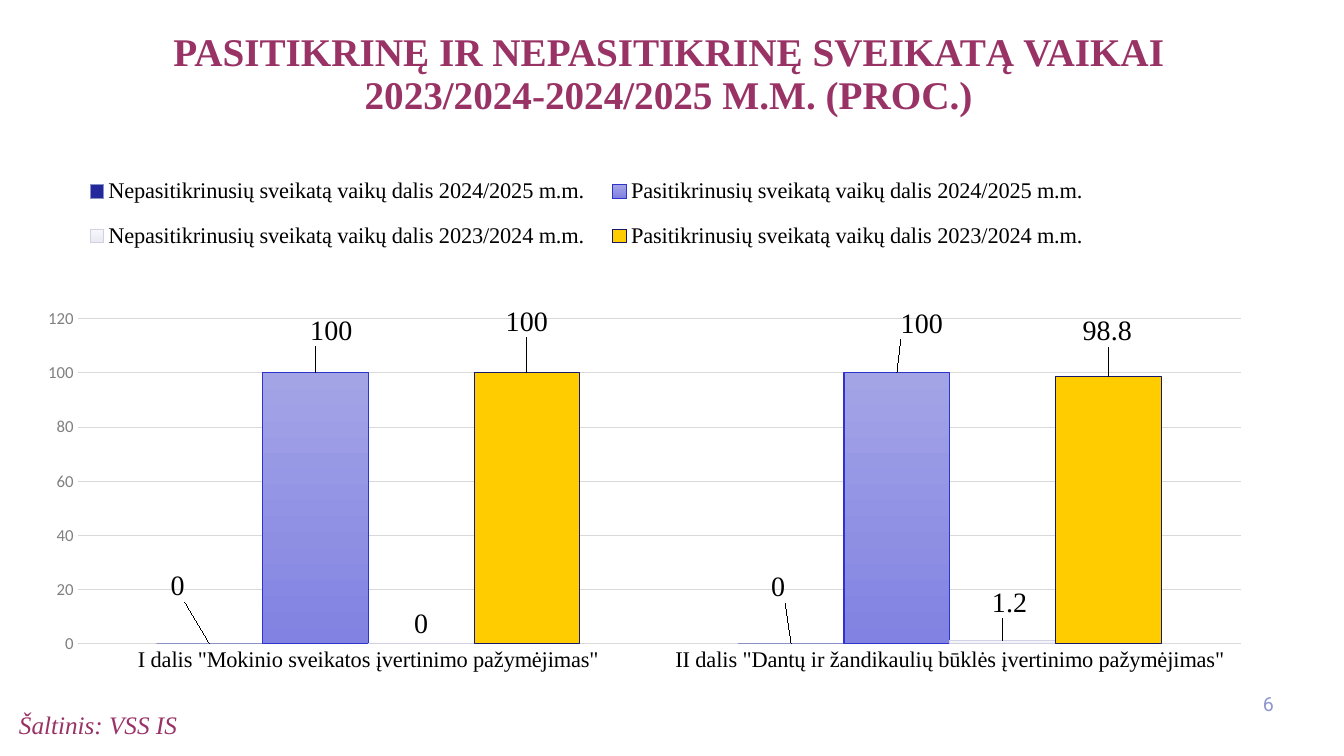
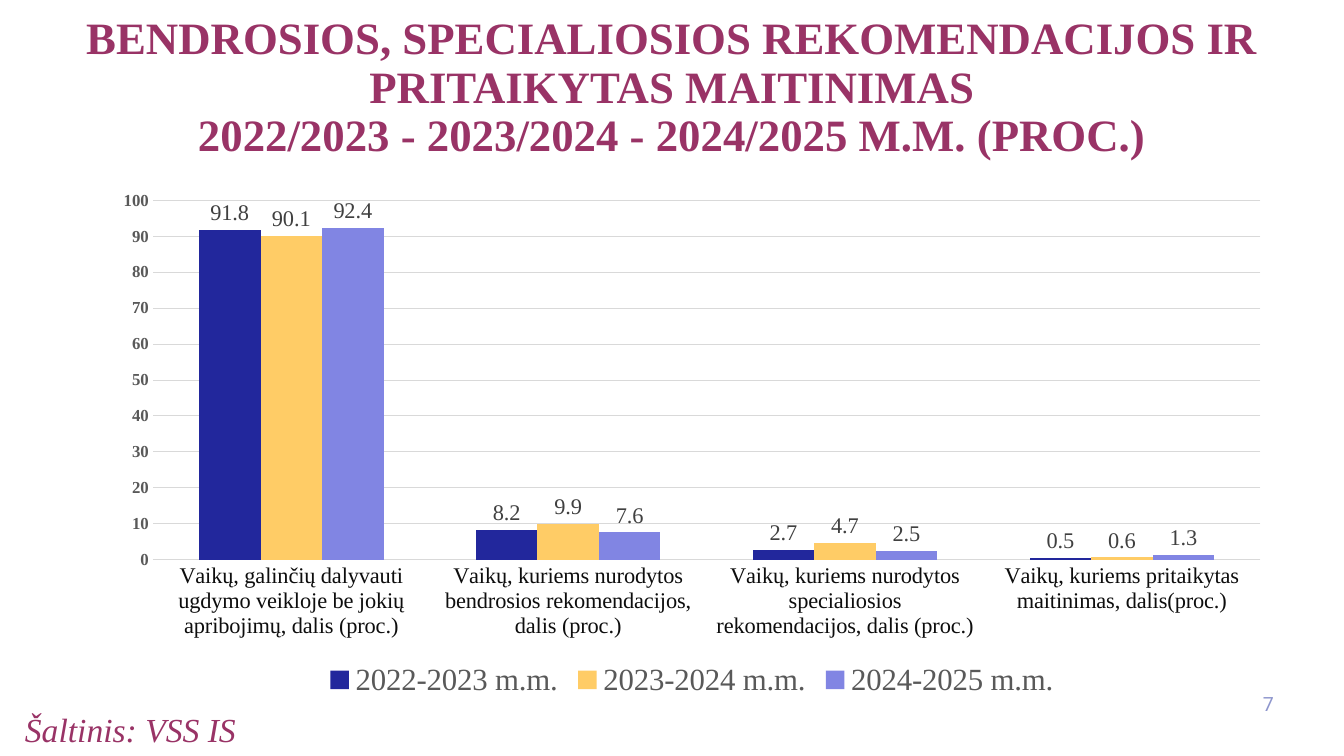
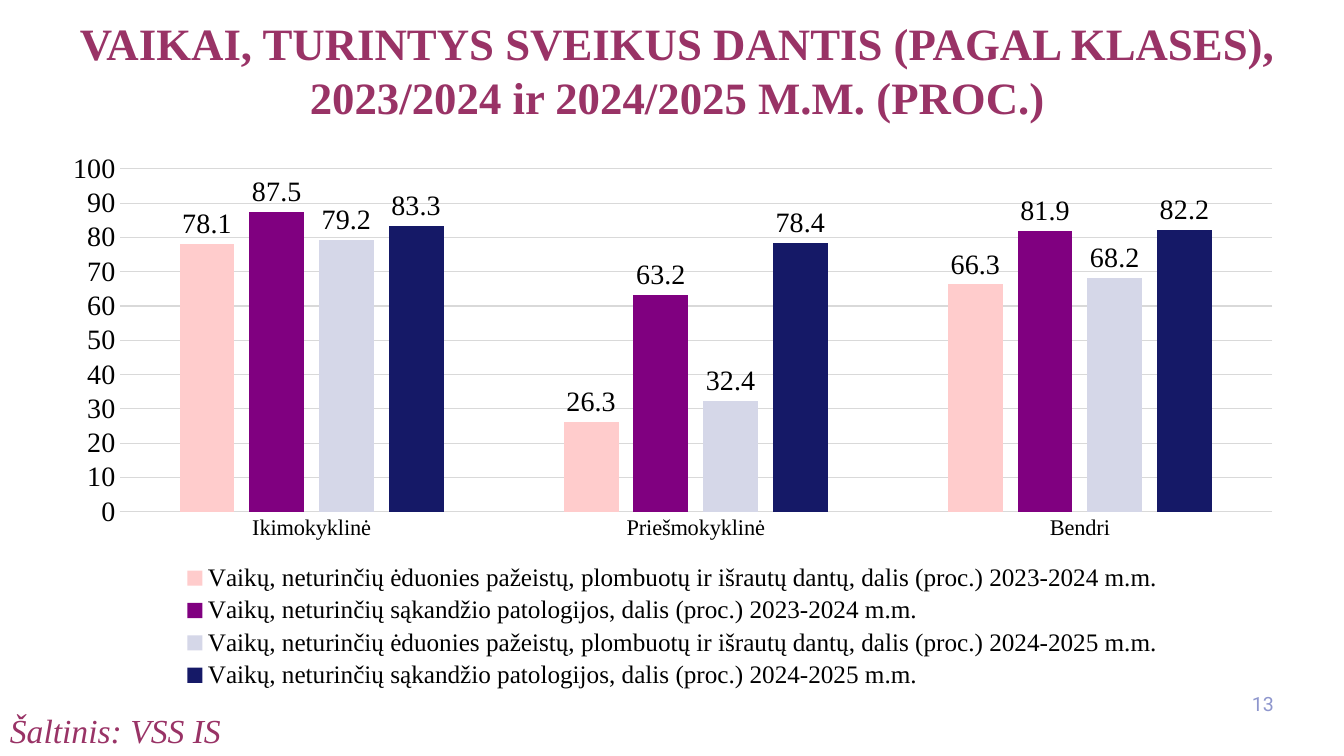
from dataclasses import dataclass, field
from typing import Optional

from lxml.etree import SubElement
from pptx import Presentation
from pptx.chart.data import CategoryChartData
from pptx.dml.color import RGBColor
from pptx.enum.chart import XL_CHART_TYPE, XL_LABEL_POSITION, XL_LEGEND_POSITION, XL_TICK_MARK
from pptx.enum.text import MSO_ANCHOR, MSO_AUTO_SIZE, PP_ALIGN
from pptx.oxml import parse_xml
from pptx.oxml.ns import nsdecls, qn
from pptx.util import Emu, Pt

# Shared colours and fonts
PLUM = RGBColor(0x99, 0x33, 0x66)
PAGE_BLUE = RGBColor(0x8E, 0x96, 0xCD)
BLACK = RGBColor(0x00, 0x00, 0x00)
INK = RGBColor(0x0D, 0x0D, 0x0D)
CHARCOAL = RGBColor(0x40, 0x40, 0x40)
GREY = RGBColor(0x59, 0x59, 0x59)
MID_GREY = RGBColor(0x80, 0x80, 0x80)
GRID = RGBColor(0xD9, 0xD9, 0xD9)
BLUE = RGBColor(0x22, 0x27, 0x9C)
BLUE_EDGE = RGBColor(0x8A, 0x92, 0xC8)
LILAC_TOP = RGBColor(0xA3, 0xA4, 0xE6)
LILAC_END = RGBColor(0x81, 0x82, 0xE2)
LILAC_EDGE = RGBColor(0x2D, 0x33, 0xCB)
LILAC = RGBColor(0x81, 0x85, 0xE3)
MIST_TOP = RGBColor(0xF6, 0xF7, 0xFA)
MIST_END = RGBColor(0xE9, 0xEA, 0xF3)
MIST_EDGE = RGBColor(0xD0, 0xD2, 0xE3)
MIST = RGBColor(0xD5, 0xD7, 0xE8)
GOLD = RGBColor(0xFF, 0xCC, 0x00)
SAND = RGBColor(0xFF, 0xCC, 0x66)
PINK = RGBColor(0xFF, 0xCC, 0xCC)
PURPLE = RGBColor(0x80, 0x00, 0x80)
NAVY = RGBColor(0x15, 0x19, 0x67)
SERIF, SANS, NUMBER_FONT = "Times New Roman", "Calibri", "Roboto"

EMU_PER_PX = 914400 / 100.8
SLIDE_W, SLIDE_H = 1344, 756
SOURCE = "Šaltinis: VSS IS"
TITLE_ONLY = 5


@dataclass(frozen=True)
class Box:
    x: int
    y: int
    w: int
    h: int

    def emu(self) -> tuple:
        return tuple(px(v) for v in (self.x, self.y, self.w, self.h))


@dataclass(frozen=True)
class Style:
    size: int
    color: RGBColor
    name: str = SERIF
    bold: bool = False
    italic: bool = False


@dataclass(frozen=True)
class Series:
    name: str
    values: tuple
    color: RGBColor
    fade_to: Optional[RGBColor] = None
    edge: Optional[RGBColor] = None
    nudges: dict = field(default_factory=dict)  # point index -> label offset in px


@dataclass(frozen=True)
class ColumnChart:
    box: Box
    categories: tuple
    series: tuple
    top: int
    step: int
    category_style: Style
    value_style: Style
    legend_style: Style
    label_style: Style
    legend_at: XL_LEGEND_POSITION = XL_LEGEND_POSITION.BOTTOM
    gap: int = 150
    overlap: int = 0
    axis_line: bool = True
    plot_area: Optional[tuple] = None    # fractions of the chart
    legend_area: Optional[tuple] = None


@dataclass(frozen=True)
class Page:
    number: int
    title: tuple
    title_box: Box
    title_size: int
    line_spacing: float
    source_box: Box
    source_size: int
    chart: ColumnChart


def px(n: int) -> Emu:
    return Emu(round(n * EMU_PER_PX))


def set_font(font, style: Style) -> None:
    font.size, font.name = Pt(style.size), style.name
    font.bold, font.italic = style.bold, style.italic
    font.color.rgb = style.color


def write(sp, lines: tuple, style: Style, align=PP_ALIGN.LEFT,
          anchor=MSO_ANCHOR.TOP, spacing: float = 1.0) -> None:
    tf = sp.text_frame
    tf.word_wrap, tf.auto_size, tf.vertical_anchor = True, MSO_AUTO_SIZE.NONE, anchor
    p = tf.paragraphs[0]
    p.alignment, p.line_spacing = align, spacing
    for i, line in enumerate(lines):
        if i:
            p.add_line_break()
        r = p.add_run()
        r.text = line
        set_font(r.font, style)


# Chart parts
def make_layout(inner: bool = False, **values: float):
    layout = parse_xml(f"<c:layout {nsdecls('c')}/>")
    manual = SubElement(layout, qn("c:manualLayout"))
    if inner:
        SubElement(manual, qn("c:layoutTarget")).set("val", "inner")
    if "w" in values:
        for mode in ("xMode", "yMode"):
            SubElement(manual, qn(f"c:{mode}")).set("val", "edge")
    for key, value in values.items():
        SubElement(manual, qn(f"c:{key}")).set("val", str(round(value, 4)))
    return layout


def place_areas(chart, spec: ColumnChart) -> None:
    if spec.plot_area:
        area = chart.element.xpath(".//c:plotArea")[0]
        for old in area.findall(qn("c:layout")):
            area.remove(old)
        area.insert(0, make_layout(True, **dict(zip("xywh", spec.plot_area))))
    if spec.legend_area:
        pos = chart.element.xpath(".//c:legendPos")[0]
        pos.addnext(make_layout(**dict(zip("xywh", spec.legend_area))))


def style_axes(chart, spec: ColumnChart) -> None:
    cat, val = chart.category_axis, chart.value_axis
    for axis, style in ((cat, spec.category_style), (val, spec.value_style)):
        axis.major_tick_mark = axis.minor_tick_mark = XL_TICK_MARK.NONE
        set_font(axis.tick_labels.font, style)
        axis.format.line.fill.background()
    if spec.axis_line:
        cat.format.line.color.rgb = GRID
        cat.format.line.width = Pt(0.75)
    val.minimum_scale, val.maximum_scale, val.major_unit = 0, spec.top, spec.step
    val.has_major_gridlines = True
    val.major_gridlines.format.line.color.rgb = GRID
    val.major_gridlines.format.line.width = Pt(0.75)


def style_series(ser, item: Series, spec: ColumnChart) -> None:
    fill, line = ser.format.fill, ser.format.line
    if item.fade_to:
        fill.gradient()
        fill.gradient_angle = 270
        for stop, color in zip(fill.gradient_stops, (item.color, item.fade_to)):
            stop.color.rgb = color
    else:
        fill.solid()
        fill.fore_color.rgb = item.color
    if item.edge:
        line.color.rgb = item.edge
        line.width = Pt(0.75)
    else:
        line.fill.background()
    labels = ser.data_labels
    labels.show_value, labels.position = True, XL_LABEL_POSITION.OUTSIDE_END
    set_font(labels.font, spec.label_style)


def nudge_labels(chart, ser, index: int, item: Series, box: Box) -> None:
    for point, (dx, dy) in item.nudges.items():
        label = ser.points[point].data_label
        set_font(label.font, spec_font := chart_label_style(ser))
        label.position = XL_LABEL_POSITION.OUTSIDE_END
        idx = chart.element.xpath(
            f".//c:ser[{index + 1}]/c:dLbls/c:dLbl/c:idx[@val='{point}']")[0]
        idx.addnext(make_layout(x=dx / box.w, y=dy / box.h))


def chart_label_style(ser) -> Style:
    font = ser.data_labels.font
    return Style(int(font.size.pt), font.color.rgb, font.name)


def add_column_chart(slide, spec: ColumnChart) -> None:
    data = CategoryChartData()
    data.categories = spec.categories
    for item in spec.series:
        data.add_series(item.name, item.values)
    chart = slide.shapes.add_chart(
        XL_CHART_TYPE.COLUMN_CLUSTERED, *spec.box.emu(), data).chart
    set_font(chart.font, Style(10, BLACK, SANS))
    chart.has_title = False
    chart.has_legend = True
    chart.legend.position = spec.legend_at
    chart.legend.include_in_layout = False
    set_font(chart.legend.font, spec.legend_style)
    plot = chart.plots[0]
    plot.gap_width, plot.overlap, plot.vary_by_categories = spec.gap, spec.overlap, False
    style_axes(chart, spec)
    for i, (ser, item) in enumerate(zip(plot.series, spec.series)):
        style_series(ser, item, spec)
        nudge_labels(chart, ser, i, item, spec.box)
    place_areas(chart, spec)


def add_page(prs, page: Page) -> None:
    slide = prs.slides.add_slide(prs.slide_layouts[TITLE_ONLY])
    title = slide.shapes.title
    title.left, title.top, title.width, title.height = page.title_box.emu()
    write(title, page.title, Style(page.title_size, PLUM, bold=True),
          PP_ALIGN.CENTER, spacing=page.line_spacing)
    add_column_chart(slide, page.chart)
    write(slide.shapes.add_textbox(*page.source_box.emu()), (SOURCE,),
          Style(page.source_size, PLUM, italic=True))
    write(slide.shapes.add_textbox(*Box(1232, 684, 52, 40).emu()), (str(page.number),),
          Style(14, PAGE_BLUE, NUMBER_FONT), PP_ALIGN.RIGHT, MSO_ANCHOR.MIDDLE)


# Slide content
CHECKUPS = ColumnChart(
    Box(32, 135, 1232, 606),
    ('I dalis "Mokinio sveikatos įvertinimo pažymėjimas"',
     'II dalis "Dantų ir žandikaulių būklės įvertinimo pažymėjimas"'),
    (Series("Nepasitikrinusių sveikatą vaikų dalis 2024/2025 m.m.", (0, 0), BLUE,
            edge=BLUE_EDGE, nudges={0: (-32, -38), 1: (-13, -37)}),
     Series("Pasitikrinusių sveikatą vaikų dalis 2024/2025 m.m.", (100, 100), LILAC_TOP,
            LILAC_END, LILAC_EDGE, {0: (16, -22), 1: (25, -29)}),
     Series("Nepasitikrinusių sveikatą vaikų dalis 2023/2024 m.m.", (0, 1.2), MIST_TOP,
            MIST_END, MIST_EDGE, {1: (7, -18)}),
     Series("Pasitikrinusių sveikatą vaikų dalis 2023/2024 m.m.", (100, 98.8), GOLD,
            edge=NAVY, nudges={0: (0, -31), 1: (-1, -25)})),
    top=120, step=20,
    category_style=Style(16, BLACK), value_style=Style(12, MID_GREY, SANS),
    legend_style=Style(16, BLACK), label_style=Style(20, BLACK),
    legend_at=XL_LEGEND_POSITION.TOP, axis_line=False,
    plot_area=(0.037, 0.303, 0.944, 0.537), legend_area=(0.03, 0.04, 0.84, 0.18))

RECOMMENDATIONS = ColumnChart(
    Box(100, 181, 1184, 522),
    ("Vaikų, galinčių dalyvauti ugdymo veikloje be jokių apribojimų, dalis (proc.)",
     "Vaikų, kuriems nurodytos bendrosios rekomendacijos, dalis (proc.)",
     "Vaikų, kuriems nurodytos specialiosios rekomendacijos, dalis (proc.)",
     "Vaikų, kuriems pritaikytas maitinimas, dalis(proc.)"),
    (Series("2022-2023 m.m.", (91.8, 8.2, 2.7, 0.5), BLUE),
     Series("2023-2024 m.m.", (90.1, 9.9, 4.7, 0.6), SAND),
     Series("2024-2025 m.m.", (92.4, 7.6, 2.5, 1.3), LILAC)),
    top=100, step=10,
    category_style=Style(16, INK), value_style=Style(12, GREY, bold=True),
    legend_style=Style(22, GREY), label_style=Style(16, CHARCOAL))

NO_DECAY = "Vaikų, neturinčių ėduonies pažeistų, plombuotų ir išrautų dantų, dalis (proc.)"
NO_BITE = "Vaikų, neturinčių sąkandžio patologijos, dalis (proc.)"
TEETH = ColumnChart(
    Box(48, 142, 1249, 552),
    ("Ikimokyklinė", "Priešmokyklinė", "Bendri"),
    (Series(f"{NO_DECAY} 2023-2024 m.m.", (78.1, 26.3, 66.3), PINK),
     Series(f"{NO_BITE} 2023-2024 m.m.", (87.5, 63.2, 81.9), PURPLE),
     Series(f"{NO_DECAY} 2024-2025 m.m.", (79.2, 32.4, 68.2), MIST),
     Series(f"{NO_BITE} 2024-2025 m.m.", (83.3, 78.4, 82.2), NAVY)),
    top=100, step=10,
    category_style=Style(16, BLACK), value_style=Style(20, BLACK),
    legend_style=Style(18, BLACK), label_style=Style(20, BLACK),
    gap=219, overlap=-27)

PAGES = (
    Page(6, ("PASITIKRINĘ IR NEPASITIKRINĘ SVEIKATĄ VAIKAI",
             "2023/2024-2024/2025 M.M. (PROC.)"),
         Box(-12, 28, 1361, 139), 28, 0.9, Box(9, 704, 635, 38), 18, CHECKUPS),
    Page(7, ("BENDROSIOS, SPECIALIOSIOS REKOMENDACIJOS IR PRITAIKYTAS MAITINIMAS",
             "2022/2023 - 2023/2024 - 2024/2025 M.M. (PROC.)"),
         Box(-11, 11, 1366, 139), 32, 0.9, Box(15, 704, 635, 38), 24, RECOMMENDATIONS),
    Page(13, ("VAIKAI, TURINTYS SVEIKUS DANTIS (PAGAL KLASES),",
              "2023/2024 ir 2024/2025 M.M. (PROC.)"),
         Box(4, 11, 1347, 119), 32, 1.0, Box(0, 705, 672, 50), 24, TEETH),
)


def main() -> None:
    prs = Presentation()
    prs.slide_width, prs.slide_height = px(SLIDE_W), px(SLIDE_H)
    for page in PAGES:
        add_page(prs, page)
    prs.save("out.pptx")


if __name__ == "__main__":
    main()
